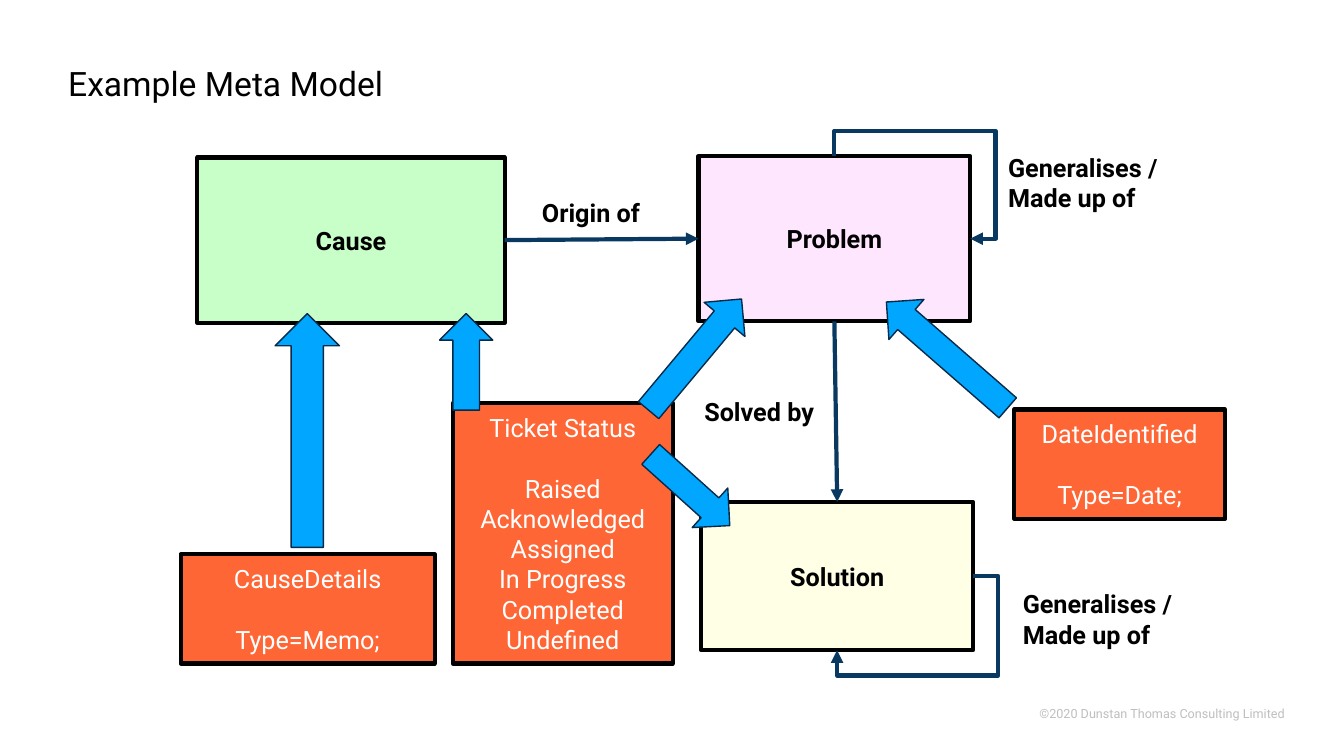
from pptx import Presentation
from pptx.dml.color import RGBColor
from pptx.enum.shapes import MSO_CONNECTOR, MSO_SHAPE
from pptx.enum.text import MSO_ANCHOR, MSO_AUTO_SIZE, PP_ALIGN
from pptx.oxml.ns import qn
from pptx.util import Pt
from lxml.etree import SubElement

FONT = "Roboto"
HUES = {
    "black": "000000", "white": "FFFFFF", "grey": "BFBFBF",
    "green": "C8FFC8", "pink": "FFE6FF", "cream": "FFFFE6",
    "orange": "FF6635", "blue": "01A6FF", "edge": "072A48", "navy": "093961",
}
TOP, LEFT, BASE, RIGHT = range(4)
LINE_GAP = 21.6
LOOP_GAP = Pt(18)

STATES = ["Raised", "Acknowledged", "Assigned", "In Progress", "Completed",
          "Undefined"]
ARROWS = [
    (196.5, 224, 46, 167, 0),
    (657.5, 196, 38, 115, 311.1),
    (314, 224, 38, 69, 0),
    (474, 312, 38, 76, 132),
    (477.5, 201.5, 38, 103.5, 39.9),
]
LABELS = [
    ("Origin of", 380, 137.5, 90, 29, False),
    ("Generalises / Made up of", 713, 105, 136, 51, True),
    ("Solved by", 496, 279.5, 100, 29, False),
    ("Generalises / Made up of", 723.5, 417, 136, 51, True),
]


def rgb(hue):
    return RGBColor.from_string(HUES[hue])


def add_run(para, text, size=18, hue="black", bold=False):
    run = para.add_run()
    run.text = text
    font = run.font
    font.name, font.size, font.bold = FONT, Pt(size), bold
    font.color.rgb = rgb(hue)


def add_form(slide, kind, place, fill, line, width):
    form = slide.shapes.add_shape(kind, *map(Pt, place))
    form.shadow.inherit = False
    form.fill.solid()
    form.fill.fore_color.rgb = rgb(fill)
    form.line.color.rgb = rgb(line)
    form.line.width = Pt(width)
    return form


def add_class(slide, name, place, fill):
    box = add_form(slide, MSO_SHAPE.RECTANGLE, place, fill, "black", 3)
    para = box.text_frame.paragraphs[0]
    para.alignment = PP_ALIGN.CENTER
    add_run(para, name, bold=True)
    return box


def add_tag(slide, name, lines, place):
    """Add an orange box: a name, a one-line gap, then the lines."""
    box = add_form(slide, MSO_SHAPE.FLOWCHART_PROCESS, place, "orange",
                   "black", 3)
    frame = box.text_frame
    frame.vertical_anchor = MSO_ANCHOR.MIDDLE
    for i, text in enumerate([name] + lines):
        para = frame.add_paragraph() if i else frame.paragraphs[0]
        para.alignment = PP_ALIGN.CENTER
        if i == 1:
            para.space_before = Pt(LINE_GAP)
        add_run(para, text, hue="white")


def add_arrow(slide, x, y, w, h, turn):
    arrow = add_form(slide, MSO_SHAPE.UP_ARROW, (x, y, w, h), "blue",
                     "edge", 1)
    arrow.rotation = turn


def add_link(slide, start, end, kind=MSO_CONNECTOR.STRAIGHT):
    """Join two (box, site) ends with an arrow."""
    link = slide.shapes.add_connector(kind, 0, 0, 0, 0)
    link.begin_connect(*start)
    link.end_connect(*end)
    link.line.color.rgb = rgb("navy")
    link.line.width = Pt(3)
    SubElement(link.line._get_or_add_ln(), qn("a:tailEnd"), type="triangle")
    SubElement(link._element.spPr, qn("a:effectLst"))
    return link


def add_loop(slide, box, start, end, turned):
    """Lead an arrow from one side of a box around its corner to the next."""
    link = add_link(slide, (box, start), (box, end), MSO_CONNECTOR.ELBOW)
    if turned:
        wide, high = link.width, link.height
        shift = (wide - high) // 2
        link.left, link.top = link.left + shift, link.top - shift
        link.width, link.height = high, wide
        frame = link._element.spPr.find(qn("a:xfrm"))
        frame.set("rot", str(270 * 60000))
        frame.set("flipH", "1")
    geom = link._element.spPr.find(qn("a:prstGeom"))
    geom.set("prst", "bentConnector4")
    guides = geom.find(qn("a:avLst"))
    if guides is None:
        guides = SubElement(geom, qn("a:avLst"))
    bends = (-LOOP_GAP / link.width, 1 + LOOP_GAP / link.height)
    for i, bend in enumerate(bends, 1):
        SubElement(guides, qn("a:gd"), name=f"adj{i}",
                   fmla=f"val {round(bend * 100000)}")


def add_label(slide, text, x, y, w, h, wrap):
    box = slide.shapes.add_textbox(*map(Pt, (x, y, w, h)))
    box.text_frame.word_wrap = wrap
    add_run(box.text_frame.paragraphs[0], text, bold=True)


def add_title(slide, text):
    title = slide.shapes.title
    title.left, title.top, title.width, title.height = map(
        Pt, (41.5, 44.5, 868.5, 36.5))
    frame = title.text_frame
    frame.auto_size = MSO_AUTO_SIZE.NONE
    frame.vertical_anchor = MSO_ANCHOR.TOP
    para = frame.paragraphs[0]
    para.alignment = PP_ALIGN.LEFT
    para.line_spacing = 0.9
    add_run(para, text, 24)


def add_foot(slide, text):
    box = slide.shapes.add_textbox(*map(Pt, (558, 501, 359.5, 18)))
    frame = box.text_frame
    frame.word_wrap = True
    frame.margin_left = frame.margin_right = 0
    para = frame.paragraphs[0]
    para.alignment = PP_ALIGN.RIGHT
    add_run(para, text, 9, "grey")


def main():
    deck = Presentation()
    deck.slide_width, deck.slide_height = Pt(960), Pt(540)
    slide = deck.slides.add_slide(deck.slide_layouts[5])
    add_title(slide, "Example Meta Model")
    add_foot(slide, "©2020 Dunstan Thomas Consulting Limited")

    fix = add_class(slide, "Solution", (501, 358.5, 194, 106), "cream")
    issue = add_class(slide, "Problem", (499, 111.5, 194, 118), "pink")
    cause = add_class(slide, "Cause", (141, 112.5, 219.5, 118), "green")

    add_tag(slide, "CauseDetails", ["Type=Memo;"], (129, 396, 181.5, 78))
    add_tag(slide, "DateIdentified", ["Type=Date;"],
            (724.5, 292.5, 150.5, 78))
    add_tag(slide, "Ticket Status", STATES, (323.5, 288, 157, 186))
    for arrow in ARROWS:
        add_arrow(slide, *arrow)

    add_link(slide, (cause, RIGHT), (issue, LEFT))
    add_link(slide, (issue, BASE), (fix, TOP))
    add_loop(slide, issue, TOP, RIGHT, True)
    add_loop(slide, fix, RIGHT, BASE, False)
    for label in LABELS:
        add_label(slide, *label)
    deck.save("out.pptx")


if __name__ == "__main__":
    main()
